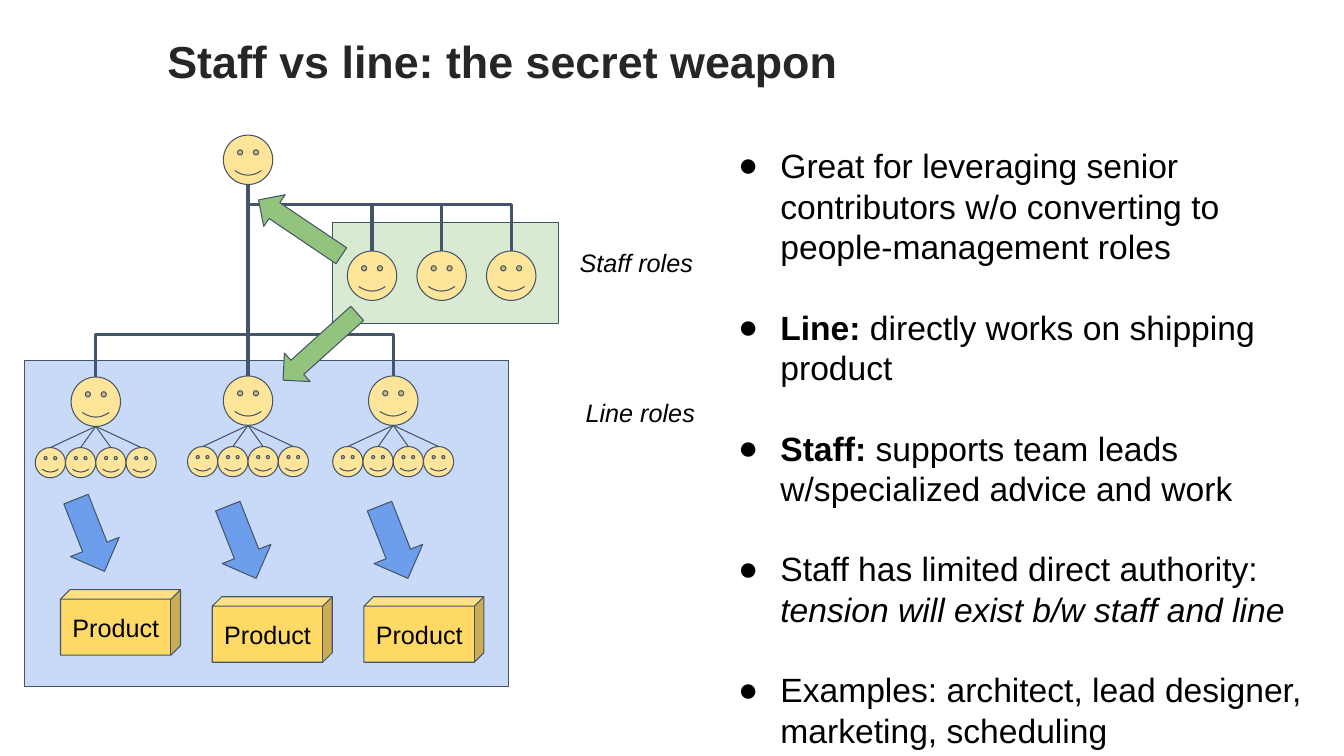
import pptx
import pptx.util
import pptx.dml.color
import pptx.enum.shapes
import pptx.enum.text
import pptx.oxml.ns
import lxml.etree

Inches, Pt = pptx.util.Inches, pptx.util.Pt
SHAPE = pptx.enum.shapes.MSO_SHAPE
CONNECTOR = pptx.enum.shapes.MSO_CONNECTOR
ALIGN = pptx.enum.text.PP_ALIGN
ANCHOR = pptx.enum.text.MSO_ANCHOR
qn = pptx.oxml.ns.qn

OUTLINE = "44546A"
SKIN = "FFE599"
FACE = 0.49
SMALL_FACE = 0.3
LABEL_FORMAT = {"name": "Arial", "size": Pt(18)}
BODY_FORMAT = {"name": "Arial", "size": Pt(24)}
TITLE_FORMAT = {"name": "Arial", "size": Pt(32), "bold": True}

POINTS = [
    [("Great for leveraging senior contributors w/o converting to people-management roles", {})],
    [("Line:", {"bold": True}), (" directly works on shipping product", {})],
    [("Staff:", {"bold": True}), (" supports team leads w/specialized advice and work", {})],
    [("Staff has limited direct authority: ", {}),
     ("tension will exist b/w staff and line", {"italic": True})],
    [("Examples: architect, lead designer, marketing, scheduling", {})],
]


def rgb(hex_color):
    return pptx.dml.color.RGBColor.from_string(hex_color)


def apply(target, values):
    for name, value in values.items():
        setattr(target, name, value)


def place(shape, box):
    apply(shape, dict(zip(("left", "top", "width", "height"), map(Inches, box))))


def write(paragraph, text, values, color="000000"):
    run = paragraph.add_run()
    run.text = text
    apply(run.font, values)
    run.font.color.rgb = rgb(color)


def set_frame(frame, inset=0.1, anchor=ANCHOR.TOP):
    margins = {"margin_left": Inches(0.1), "margin_right": Inches(0.1),
               "margin_top": Inches(inset), "margin_bottom": Inches(inset)}
    apply(frame, {"word_wrap": True, "vertical_anchor": anchor,
                  "auto_size": pptx.enum.text.MSO_AUTO_SIZE.NONE, **margins})


def add_figure(slide, kind, box, fill, adjustment=None, rotation=0):
    figure = slide.shapes.add_shape(kind, *map(Inches, box))
    figure.shadow.inherit = False
    figure.fill.solid()
    figure.fill.fore_color.rgb = rgb(fill)
    figure.line.color.rgb = rgb(OUTLINE)
    figure.line.width = Pt(0.75)
    figure.rotation = rotation
    if adjustment is not None:
        figure.adjustments[0] = adjustment
    return figure


def add_face(slide, center, top, size=FACE):
    add_figure(slide, SHAPE.SMILEY_FACE, (center - size / 2, top, size, size), SKIN, 0.05)


def add_line(slide, start, end, width, kind=CONNECTOR.STRAIGHT):
    line = slide.shapes.add_connector(kind, *map(Inches, (*start, *end)))
    line.line.color.rgb = rgb(OUTLINE)
    line.line.width = Pt(width)
    lxml.etree.SubElement(line._element.spPr, qn("a:effectLst"))
    return line


def add_branch(slide, start, end, bend_y):
    """Elbow that runs down, across at bend_y, and down again."""
    (x1, y1), (x2, y2) = start, end
    mid_x, mid_y = (x1 + x2) / 2, (y1 + y2) / 2
    half_drop, half_run = (y2 - y1) / 2, (x2 - x1) / 2
    branch = add_line(slide, (mid_x - half_drop, mid_y + half_run),
                      (mid_x + half_drop, mid_y - half_run), 2.25, CONNECTOR.ELBOW)
    properties = branch._element.spPr
    properties.find(qn("a:xfrm")).set("rot", "5400000")
    adjustments = properties.find(qn("a:prstGeom")).find(qn("a:avLst"))
    guide = lxml.etree.SubElement(adjustments, qn("a:gd"))
    guide.set("name", "adj1")
    guide.set("fmla", f"val {round((bend_y - y1) / (y2 - y1) * 100000)}")


def add_label(slide, text, box):
    label = slide.shapes.add_textbox(*map(Inches, box))
    set_frame(label.text_frame)
    write(label.text_frame.paragraphs[0], text, {**LABEL_FORMAT, "italic": True})


def add_title(slide, box):
    title = slide.shapes.title
    place(title, box)
    set_frame(title.text_frame, 0.05, ANCHOR.MIDDLE)
    heading = title.text_frame.paragraphs[0]
    apply(heading, {"alignment": ALIGN.LEFT, "line_spacing": 0.9})
    write(heading, "Staff vs line: the secret weapon", TITLE_FORMAT, "262626")


def add_points(slide, box):
    body = slide.placeholders[1]
    place(body, box)
    set_frame(body.text_frame)
    for index, runs in enumerate(POINTS):
        point = body.text_frame.paragraphs[0] if index == 0 else body.text_frame.add_paragraph()
        properties = point._p.get_or_add_pPr()
        properties.set("marL", str(Inches(0.5)))
        properties.set("indent", str(Inches(-0.42)))
        bullet_color = lxml.etree.SubElement(properties, qn("a:buClr"))
        lxml.etree.SubElement(bullet_color, qn("a:srgbClr")).set("val", "000000")
        lxml.etree.SubElement(properties, qn("a:buChar")).set("char", "●")
        apply(point, {"line_spacing": 1.0, "space_before": Pt(28.8 if index else 0),
                      "space_after": Pt(0), "alignment": ALIGN.LEFT})
        for text, emphasis in runs:
            write(point, text, {**BODY_FORMAT, **emphasis})


def add_team(slide, center, top):
    add_face(slide, center, top)
    for member in range(4):
        member_x = center + (member - 1.5) * SMALL_FACE
        add_face(slide, member_x, top + 0.7, SMALL_FACE)
        add_line(slide, (center, top + FACE), (member_x, top + 0.7), 0.75)


def add_product(slide, left, top):
    add_figure(slide, SHAPE.RIGHT_ARROW, (left - 0.09, top - 0.8, 0.77, 0.52),
               "6D9EEB", rotation=68.5)
    product = add_figure(slide, SHAPE.CUBE, (left, top, 1.19, 0.65), "FFD966", 0.145)
    set_frame(product.text_frame, anchor=ANCHOR.MIDDLE)
    name = product.text_frame.paragraphs[0]
    name.alignment = ALIGN.CENTER
    write(name, "Product", LABEL_FORMAT)


def add_line_roles(slide, box):
    """Draw the line organisation and return the top of each team lead."""
    left, top, width, height = box
    add_figure(slide, SHAPE.RECTANGLE, box, "C9DAF8")
    leads = [(left + 0.71, top + 0.16), (left + 2.22, top + 0.15), (left + 3.66, top + 0.15)]
    for lead in leads:
        add_team(slide, *lead)
    for index, product_top in enumerate((2.27, 2.34, 2.34)):
        add_product(slide, left + 0.36 + 1.505 * index, top + product_top)
    add_label(slide, "Line roles", (left + 5.47, top + 0.26, 1.91, 0.52))
    return leads


def add_staff_roles(slide, box):
    """Draw the staff group and return the top of each face."""
    left, top, width, height = box
    add_figure(slide, SHAPE.RECTANGLE, box, "D9EAD3")
    staff = [(left + 0.39 + 0.69 * index, top + 0.28) for index in range(3)]
    for face in staff:
        add_face(slide, *face)
    add_label(slide, "Staff roles", (left + 2.35, top + 0.14, 2.24, 0.52))
    return staff


def add_organisation(slide, box):
    left, top, width, height = box
    leads = add_line_roles(slide, (left, top + 2.24, width, height - 2.24))
    staff = add_staff_roles(slide, (left + 3.06, top + 0.87, 2.24, 1))

    # Manager and reporting lines
    manager_x = left + 2.22
    add_face(slide, manager_x, top)
    manager = (manager_x, top + FACE)
    add_branch(slide, manager, leads[0], top + 1.98)
    add_line(slide, manager, leads[1], 2.25)
    add_branch(slide, manager, leads[2], top + 1.98)
    for face in staff:
        add_branch(slide, manager, face, top + 0.69)

    # Advice from staff to the team leads and the manager
    for x, y, angle in ((2.44, 1.91, 138), (2.24, 0.73, 214)):
        add_figure(slide, SHAPE.RIGHT_ARROW, (left + x, top + y, 0.99, 0.38),
                   "93C47D", rotation=angle)


def main():
    deck = pptx.Presentation()
    apply(deck, {"slide_width": Inches(13.33), "slide_height": Inches(7.5)})
    slide = deck.slides.add_slide(deck.slide_layouts[1])
    add_title(slide, (1.56, 0, 11.54, 1.26))
    add_organisation(slide, (0.24, 1.34, 4.8, 5.47))
    add_points(slide, (7.14, 1.34, 5.95, 6.08))
    deck.save("out.pptx")


if __name__ == "__main__":
    main()
